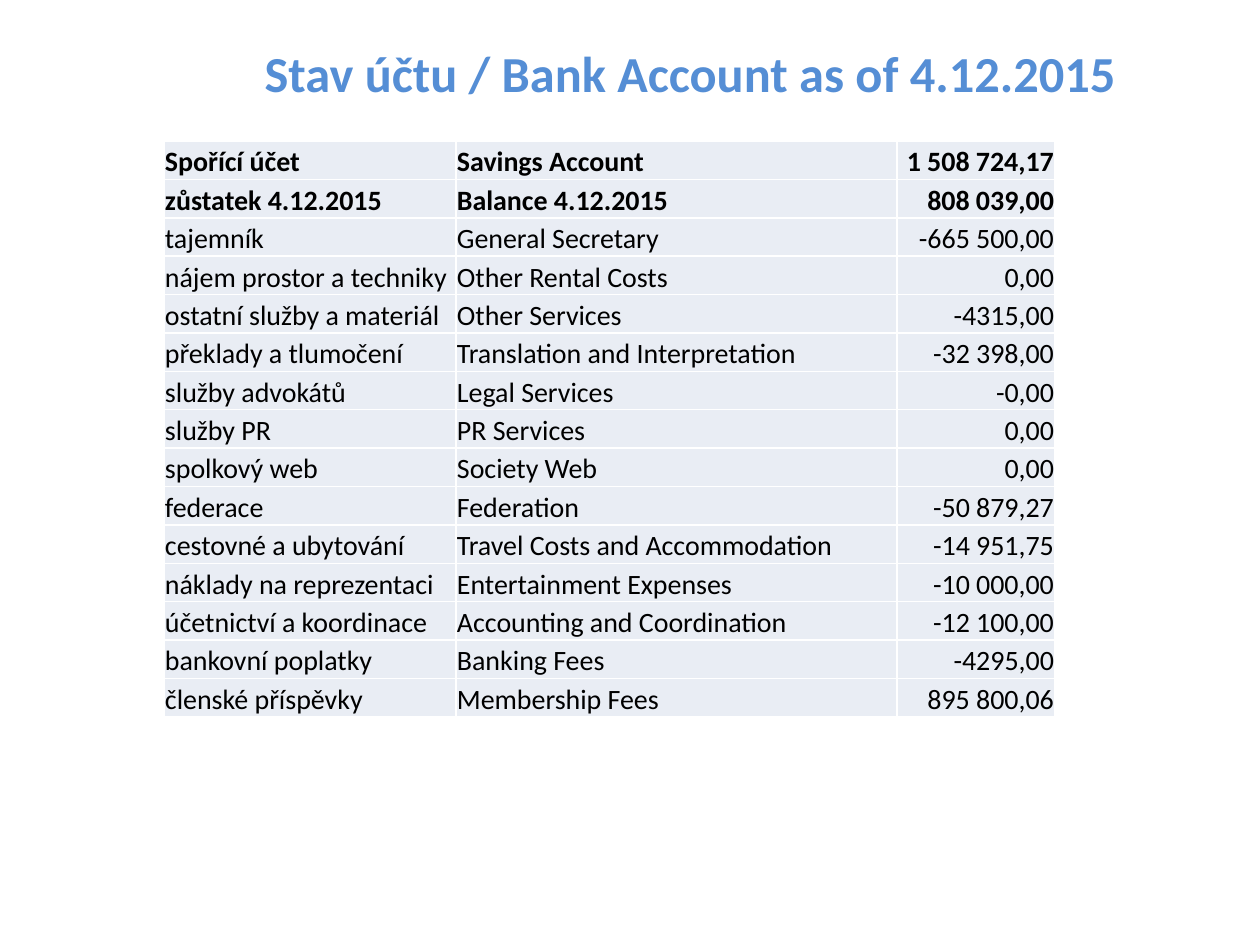
from lxml.etree import SubElement
from pptx import Presentation
from pptx.dml.color import RGBColor
from pptx.enum.text import MSO_ANCHOR as ANCHOR, PP_ALIGN as ALIGN
from pptx.oxml.ns import qn
from pptx.util import Emu, Pt

EMU_PER_PX = 914400 / 126
FONT = "Calibri"
COLUMNS = [292, 441, 158]
BOLD_ROWS = 2
ACCOUNT = [
    ("Spořící účet", "Savings Account", "1 508 724,17"),
    ("zůstatek 4.12.2015", "Balance 4.12.2015", "808 039,00"),
    ("tajemník", "General Secretary", "-665 500,00"),
    ("nájem prostor a techniky", "Other Rental Costs", "0,00"),
    ("ostatní služby a materiál", "Other Services", "-4315,00"),
    ("překlady a tlumočení", "Translation and Interpretation", "-32 398,00"),
    ("služby advokátů", "Legal Services", "-0,00"),
    ("služby PR", "PR Services", "0,00"),
    ("spolkový web", "Society Web", "0,00"),
    ("federace", "Federation", "-50 879,27"),
    ("cestovné a ubytování", "Travel Costs and Accommodation", "-14 951,75"),
    ("náklady na reprezentaci", "Entertainment Expenses", "-10 000,00"),
    ("účetnictví a koordinace", "Accounting and Coordination", "-12 100,00"),
    ("bankovní poplatky", "Banking Fees", "-4295,00"),
    ("členské příspěvky", "Membership Fees", "895 800,06"),
]


def px(n):
    """Turn whole pixels into EMU."""
    return Emu(round(n * EMU_PER_PX))


def color(value):
    """Turn a hex string into a colour."""
    return RGBColor.from_string(value)


def apply(target, values):
    """Set attributes from a dict of format values."""
    for name, value in values.items():
        setattr(target, name, value)


def write(tf, text, align, size, fill, bold):
    """Write one formatted run into a text frame."""
    p = tf.paragraphs[0]
    p.alignment = align
    r = p.add_run()
    r.text = text
    apply(r.font, {"name": FONT, "size": Pt(size), "bold": bold})
    r.font.color.rgb = color(fill)


def add_borders(cell, line, width):
    """Give all four sides of a cell a solid border."""
    tc_pr = cell._tc.get_or_add_tcPr()
    for side in ("lnL", "lnR", "lnT", "lnB"):
        ln = SubElement(tc_pr, qn(f"a:{side}"), w=str(Pt(width)))
        SubElement(SubElement(ln, qn("a:solidFill")), qn("a:srgbClr"), val=line)


def format_title(s, text):
    """Place and write the slide title."""
    sp = s.shapes.title
    apply(sp, {"left": px(184), "top": px(38), "width": px(1013), "height": px(68)})
    apply(sp.text_frame, {"word_wrap": True, "vertical_anchor": ANCHOR.MIDDLE})
    write(sp.text_frame, text, ALIGN.CENTER, 28.8, "558ED5", True)


def fill_cell(cell, text, align, bold):
    """Format one table cell and write its text."""
    apply(cell, {"margin_left": px(1), "margin_right": px(1), "margin_top": px(1),
                 "margin_bottom": 0, "vertical_anchor": ANCHOR.BOTTOM})
    add_borders(cell, "FFFFFF", 1)
    cell.fill.solid()
    cell.fill.fore_color.rgb = color("E9EDF4")
    write(cell.text_frame, text, align, 16, "000000", bold)


def add_account_table(s, rows):
    """Add the bilingual table of account items and amounts."""
    table = s.shapes.add_table(len(rows), len(COLUMNS), px(164), px(141),
                               px(sum(COLUMNS)), px(576)).table
    apply(table, {"first_row": False, "horz_banding": False})
    for column, width in zip(table.columns, COLUMNS):
        column.width = px(width)
    aligns = (ALIGN.LEFT, ALIGN.LEFT, ALIGN.RIGHT)
    for i, row in enumerate(rows):
        for j, (text, align) in enumerate(zip(row, aligns)):
            fill_cell(table.cell(i, j), text, align, i < BOLD_ROWS)


def main():
    """Build the bank account slide."""
    prs = Presentation()
    apply(prs, {"slide_width": px(1260), "slide_height": px(945)})
    s = prs.slides.add_slide(prs.slide_layouts[5])
    add_account_table(s, ACCOUNT)
    format_title(s, "Stav účtu / Bank Account as of 4.12.2015")
    prs.save("out.pptx")


if __name__ == "__main__":
    main()
